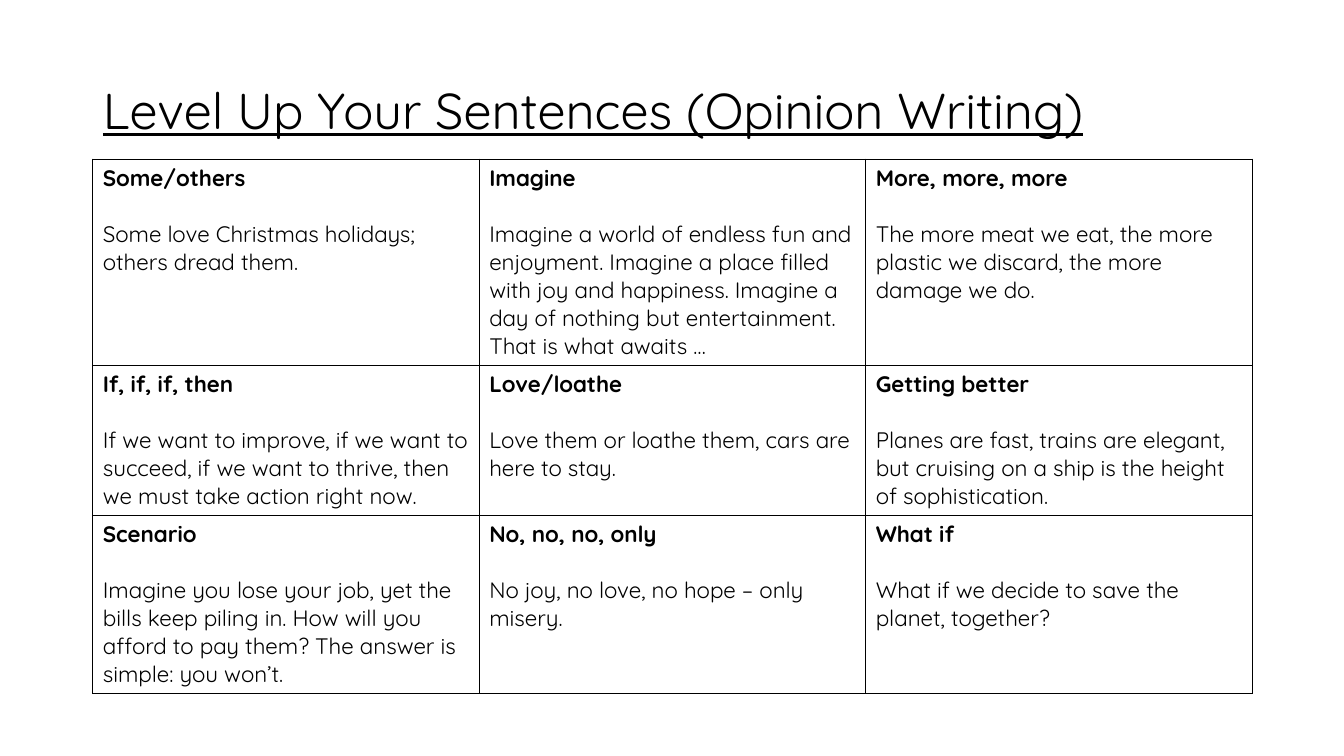
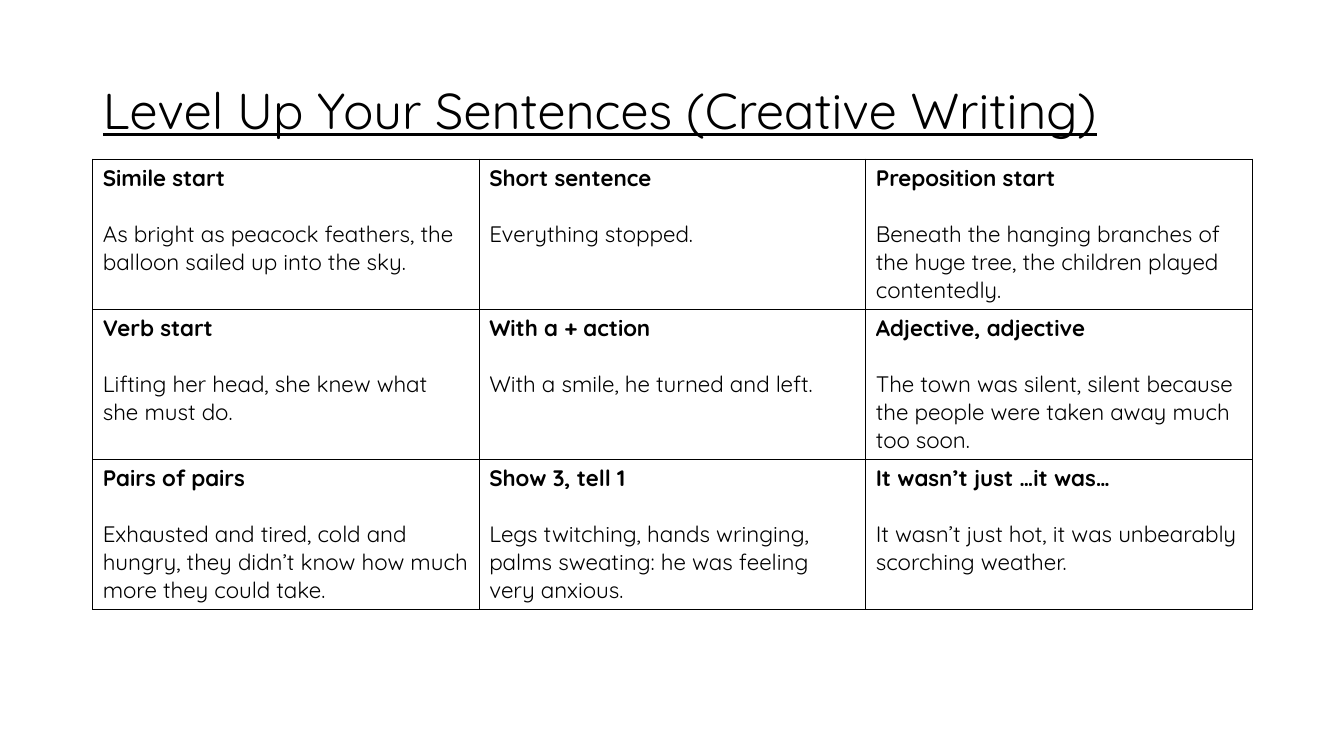
from dataclasses import dataclass

from lxml.etree import SubElement
from pptx import Presentation
from pptx.dml.color import RGBColor
from pptx.enum.text import MSO_ANCHOR, MSO_AUTO_SIZE, PP_ALIGN
from pptx.oxml.ns import qn
from pptx.util import Inches, Pt


@dataclass(frozen=True)
class Theme:
    font: str = "Quicksand"
    ink: str = "000000"
    paper: str = "FFFFFF"
    title_size: int = 36
    cell_size: int = 16
    line_height: int = 20
    cell_padding: float = 7.2
    border: int = 1


THEME = Theme()
WIDTH, HEIGHT = Inches(13.33), Inches(7.5)
LEFT, CONTENT_WIDTH = Inches(0.92), Inches(11.5)
TITLE_TOP, TITLE_HEIGHT = Inches(0.4), Inches(1.45)
TABLE_TOP = Inches(1.58)
COLUMNS = 3

OPINION = [
    ("Some/others", "Some love Christmas holidays; others dread them."),
    ("Imagine", "Imagine a world of endless fun and enjoyment. Imagine a place "
                "filled with joy and happiness. Imagine a day of nothing but "
                "entertainment. That is what awaits …"),
    ("More, more, more", "The more meat we eat, the more plastic we discard, "
                         "the more damage we do."),
    ("If, if, if, then", "If we want to improve, if we want to succeed, if we "
                         "want to thrive, then we must take action right now."),
    ("Love/loathe", "Love them or loathe them, cars are here to stay."),
    ("Getting better", "Planes are fast, trains are elegant, but cruising on a "
                       "ship is the height of sophistication."),
    ("Scenario", "Imagine you lose your job, yet the bills keep piling in. How "
                 "will you afford to pay them? The answer is simple: you won’t."),
    ("No, no, no, only", "No joy, no love, no hope – only misery."),
    ("What if", "What if we decide to save the planet, together?"),
]

CREATIVE = [
    ("Simile start", "As bright as peacock feathers, the balloon sailed up "
                     "into the sky."),
    ("Short sentence", "Everything stopped."),
    ("Preposition start", "Beneath the hanging branches of the huge tree, the "
                          "children played contentedly."),
    ("Verb start", "Lifting her head, she knew what she must do."),
    ("With a + action", "With a smile, he turned and left."),
    ("Adjective, adjective", "The town was silent, silent because the people "
                             "were taken away much too soon."),
    ("Pairs of pairs", "Exhausted and tired, cold and hungry, they didn’t know "
                       "how much more they could take."),
    ("Show 3, tell 1", "Legs twitching, hands wringing, palms sweating: he was "
                       "feeling very anxious."),
    ("It wasn’t just …it was…", "It wasn’t just hot, it was unbearably "
                                "scorching weather."),
]


def write(p, text, size=THEME.cell_size, bold=False, underline=False,
          before=None, spacing=None):
    p.alignment = PP_ALIGN.LEFT
    if before is not None:
        p.space_before = Pt(before)
    if spacing is not None:
        p.line_spacing = spacing
    r = p.add_run()
    r.text = text
    r.font.name = THEME.font
    r.font.size = Pt(size)
    r.font.bold = bold
    r.font.underline = underline
    r.font.color.rgb = RGBColor.from_string(THEME.ink)


def add_title(slide, text):
    sp = slide.shapes.title
    sp.left, sp.top = LEFT, TITLE_TOP
    sp.width, sp.height = CONTENT_WIDTH, TITLE_HEIGHT
    tf = sp.text_frame
    tf.word_wrap = True
    tf.auto_size = MSO_AUTO_SIZE.NONE
    tf.vertical_anchor = MSO_ANCHOR.MIDDLE
    write(tf.paragraphs[0], text, size=THEME.title_size, underline=True,
          spacing=0.9)


def outline(cell):
    tc_pr = cell._tc.get_or_add_tcPr()
    for side in ("a:lnL", "a:lnR", "a:lnT", "a:lnB"):
        ln = SubElement(tc_pr, qn(side), w=str(Pt(THEME.border)))
        fill = SubElement(ln, qn("a:solidFill"))
        SubElement(fill, qn("a:srgbClr"), val=THEME.ink)


def fill_cell(cell, heading, example):
    outline(cell)
    cell.fill.solid()
    cell.fill.fore_color.rgb = RGBColor.from_string(THEME.paper)
    tf = cell.text_frame
    write(tf.paragraphs[0], heading, bold=True)
    write(tf.add_paragraph(), example, before=THEME.line_height)


def row_height(example_lines):
    return Pt((example_lines + 2) * THEME.line_height + THEME.cell_padding)


def add_sentence_table(slide, entries, lines_per_row):
    heights = [row_height(lines) for lines in lines_per_row]
    table = slide.shapes.add_table(len(heights), COLUMNS, LEFT, TABLE_TOP,
                                   CONTENT_WIDTH, sum(heights)).table
    table.first_row = table.horz_banding = False
    for row, height in zip(table.rows, heights):
        row.height = height
    for i, (heading, example) in enumerate(entries):
        fill_cell(table.cell(*divmod(i, COLUMNS)), heading, example)


def add_sentence_slide(prs, genre, entries, lines_per_row):
    slide = prs.slides.add_slide(prs.slide_layouts.get_by_name("Title Only"))
    add_title(slide, f"Level Up Your Sentences ({genre} Writing)")
    add_sentence_table(slide, entries, lines_per_row)


def main():
    prs = Presentation()
    prs.slide_width, prs.slide_height = WIDTH, HEIGHT
    add_sentence_slide(prs, "Opinion", OPINION, (5, 3, 4))
    add_sentence_slide(prs, "Creative", CREATIVE, (3, 3, 3))
    prs.save("out.pptx")


if __name__ == "__main__":
    main()
